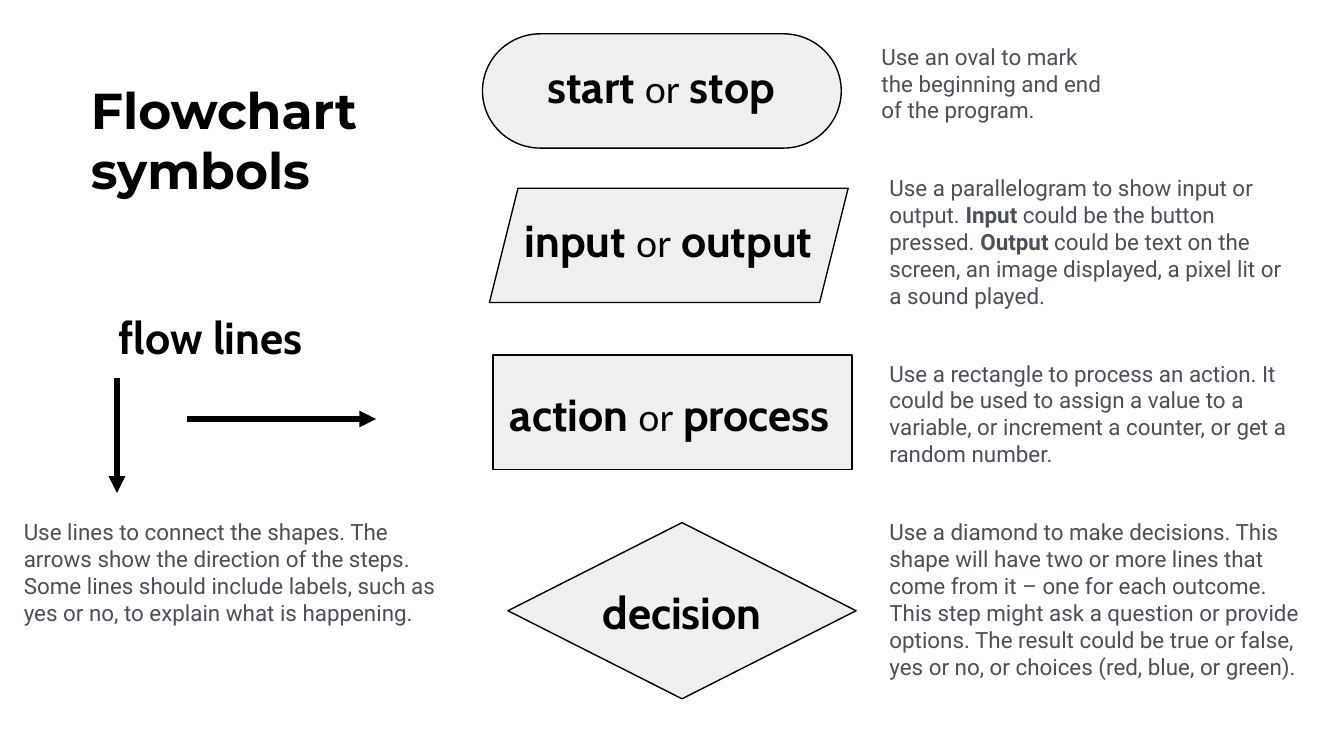
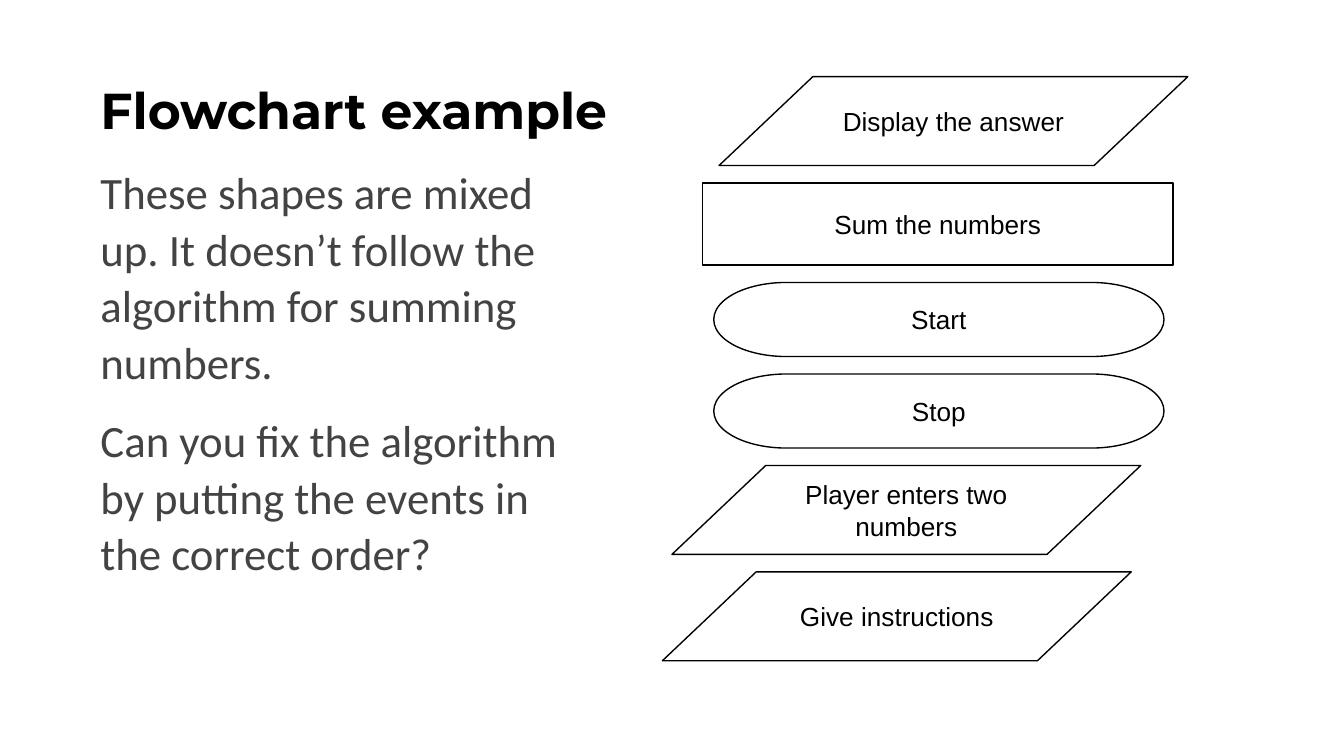
from dataclasses import dataclass

from lxml import etree
from pptx import Presentation
from pptx import util as u
from pptx.dml.color import RGBColor
from pptx.enum import shapes, text
from pptx.oxml import ns

KIND = shapes.MSO_SHAPE


@dataclass(frozen=True)
class Theme:
    ink: str = "000000"
    note_ink: str = "4B4F58"
    body_ink: str = "434343"
    symbol_fill: str = "EFEFEF"
    title: tuple = ("Montserrat", 27)
    label: tuple = ("Cabin", 24)
    joiner: tuple = ("Lato", 20)
    note: tuple = ("Roboto", 12)
    body: tuple = ("Calibri", 24)
    step: tuple = ("Arial", 14)
    outline: float = 0.75
    arrow: float = 3


THEME = Theme()

SYMBOL_SIZE = (6.78, 2.16)
LABEL_HEIGHT = 1.47
NOTE_LEFT = 16.56
NOTE_WIDTH = 8.33

SYMBOLS = [
    (KIND.FLOWCHART_TERMINATOR, (9.12, 0.64, *SYMBOL_SIZE)),
    (KIND.PARALLELOGRAM, (9.25, 3.56, *SYMBOL_SIZE)),
    (KIND.FLOWCHART_PROCESS, (9.32, 6.71, *SYMBOL_SIZE)),
    (KIND.FLOWCHART_DECISION, (9.6, 9.88, 6.58, 3.33)),
]
LABELS = [
    ("**start **or** stop**", (9.6, 0.86, 5.79)),
    ("**input **or** output**", (9.5, 3.78, 6.27)),
    ("**action **or** process**", (9.27, 7.06, 6.78)),
    ("**decision**", (9.6, 10.8, 6.58)),
    ("**flow lines**", (0.69, 5.61, 6.58)),
]
NOTES = [
    ("Use an oval to mark the beginning and end of the program.",
     (16.41, 0.56, 4.8, 2.16)),
    ("Use a parallelogram to show input or output. **Input** could be the "
     "button pressed. **Output** could be text on the screen, an image "
     "displayed, a pixel lit or a sound played.",
     (NOTE_LEFT, 3.05, 8, 3.07)),
    ("Use a rectangle to process an action. It could be used to assign a "
     "value to a variable, or increment a counter, or get a random number.",
     (NOTE_LEFT, 6.55, NOTE_WIDTH, 2.57)),
    ("Use a diamond to make decisions. This shape will have two or more "
     "lines that come from it – one for each outcome. This step might ask a "
     "question or provide options. The result could be true or false, yes or "
     "no, or choices (red, blue, or green).",
     (NOTE_LEFT, 9.55, NOTE_WIDTH, 3.58)),
    ("Use lines to connect the shapes. The arrows show the direction of the "
     "steps. Some lines should include labels, such as yes or no, to explain "
     "what is happening.",
     (0.2, 9.55, NOTE_WIDTH, 2.57)),
]
FLOW_LINES = [(3.53, 7.92, 7.11, 7.92), (2.21, 7.14, 2.21, 9.32)]

QUESTION = [
    "These shapes are mixed up. It doesn’t follow the algorithm for summing "
    "numbers.",
    "Can you fix the algorithm by putting the events in the correct order?",
]
STEP_SIZES = {
    KIND.FLOWCHART_DATA: (8.86, 1.68),
    KIND.RECTANGLE: (8.89, 1.55),
    KIND.FLOWCHART_TERMINATOR: (8.51, 1.4),
}
STEPS_TOP = 1.45
STEP_GAP = 0.33
STEPS = [
    ("Display the answer", KIND.FLOWCHART_DATA, 13.59),
    ("Sum the numbers", KIND.RECTANGLE, 13.28),
    ("Start", KIND.FLOWCHART_TERMINATOR, 13.49),
    ("Stop", KIND.FLOWCHART_TERMINATOR, 13.49),
    ("Player enters two numbers", KIND.FLOWCHART_DATA, 12.7),
    ("Give instructions", KIND.FLOWCHART_DATA, 12.52),
]


def cm(values):
    return [u.Cm(value) for value in values]


def style(font, face, color, bold=False):
    font.name, size = face
    font.size = u.Pt(size)
    font.bold = bold
    font.color.rgb = RGBColor.from_string(color)


def prepare(frame):
    frame.word_wrap = True
    frame.margin_left = frame.margin_right = u.Cm(0.25)
    frame.margin_top = frame.margin_bottom = u.Cm(0.25)


def add_box(page, place):
    box = page.shapes.add_textbox(*cm(place))
    prepare(box.text_frame)
    return box.text_frame


def add_title(page, words, place):
    frame = add_box(page, place)
    frame.text = words
    style(frame.paragraphs[0].runs[0].font, THEME.title, THEME.ink, True)


def add_marked(page, words, place, strong, plain, color, align):
    para = add_box(page, place).paragraphs[0]
    para.alignment = align
    for index, part in enumerate(words.split("**")):
        if part:
            bold = index % 2 == 1
            span = para.add_run()
            span.text = part
            style(span.font, strong if bold else plain, color, bold)


def add_symbol(page, kind, place, fill=None):
    symbol = page.shapes.add_shape(kind, *cm(place))
    symbol.shadow.inherit = False
    if fill:
        symbol.fill.solid()
        symbol.fill.fore_color.rgb = RGBColor.from_string(fill)
    else:
        symbol.fill.background()
    symbol.line.color.rgb = RGBColor.from_string(THEME.ink)
    symbol.line.width = u.Pt(THEME.outline)
    return symbol


def add_arrow(page, ends):
    arrow = page.shapes.add_connector(shapes.MSO_CONNECTOR.STRAIGHT, *cm(ends))
    arrow.line.color.rgb = RGBColor.from_string(THEME.ink)
    arrow.line.width = u.Pt(THEME.arrow)
    etree.SubElement(arrow.line._get_or_add_ln(), ns.qn("a:tailEnd"), type="triangle")
    etree.SubElement(arrow._element.spPr, ns.qn("a:effectLst"))


def build_symbols(page):
    add_title(page, "Flowchart symbols", (1.47, 1.24, 5.79, 2.74))
    for kind, place in SYMBOLS:
        add_symbol(page, kind, place, THEME.symbol_fill)
    for words, place in LABELS:
        add_marked(page, words, (*place, LABEL_HEIGHT), THEME.label,
                   THEME.joiner, THEME.ink, text.PP_ALIGN.CENTER)
    for words, place in NOTES:
        add_marked(page, words, place, THEME.note, THEME.note,
                   THEME.note_ink, text.PP_ALIGN.LEFT)
    for ends in FLOW_LINES:
        add_arrow(page, ends)


def build_example(page):
    add_title(page, "Flowchart example", (1.65, 1.24, 10.59, 1.73))
    frame = add_box(page, (1.65, 2.82, 9.75, 9.02))
    frame.text = "\n".join(QUESTION)
    for index, para in enumerate(frame.paragraphs):
        para.line_spacing = 1.05
        if index:
            para.space_before = u.Pt(12)
        style(para.runs[0].font, THEME.body, THEME.body_ink)

    top = STEPS_TOP
    for words, kind, left in STEPS:
        width, height = STEP_SIZES[kind]
        frame = add_symbol(page, kind, (left, top, width, height)).text_frame
        prepare(frame)
        frame.vertical_anchor = text.MSO_ANCHOR.MIDDLE
        frame.text = words
        para = frame.paragraphs[0]
        para.alignment = text.PP_ALIGN.CENTER
        style(para.runs[0].font, THEME.step, THEME.ink)
        top += height + STEP_GAP


def main():
    deck = Presentation()
    deck.slide_width, deck.slide_height = cm((25.4, 14.29))
    for build in (build_symbols, build_example):
        build(deck.slides.add_slide(deck.slide_layouts[6]))
    deck.save("out.pptx")


if __name__ == "__main__":
    main()
